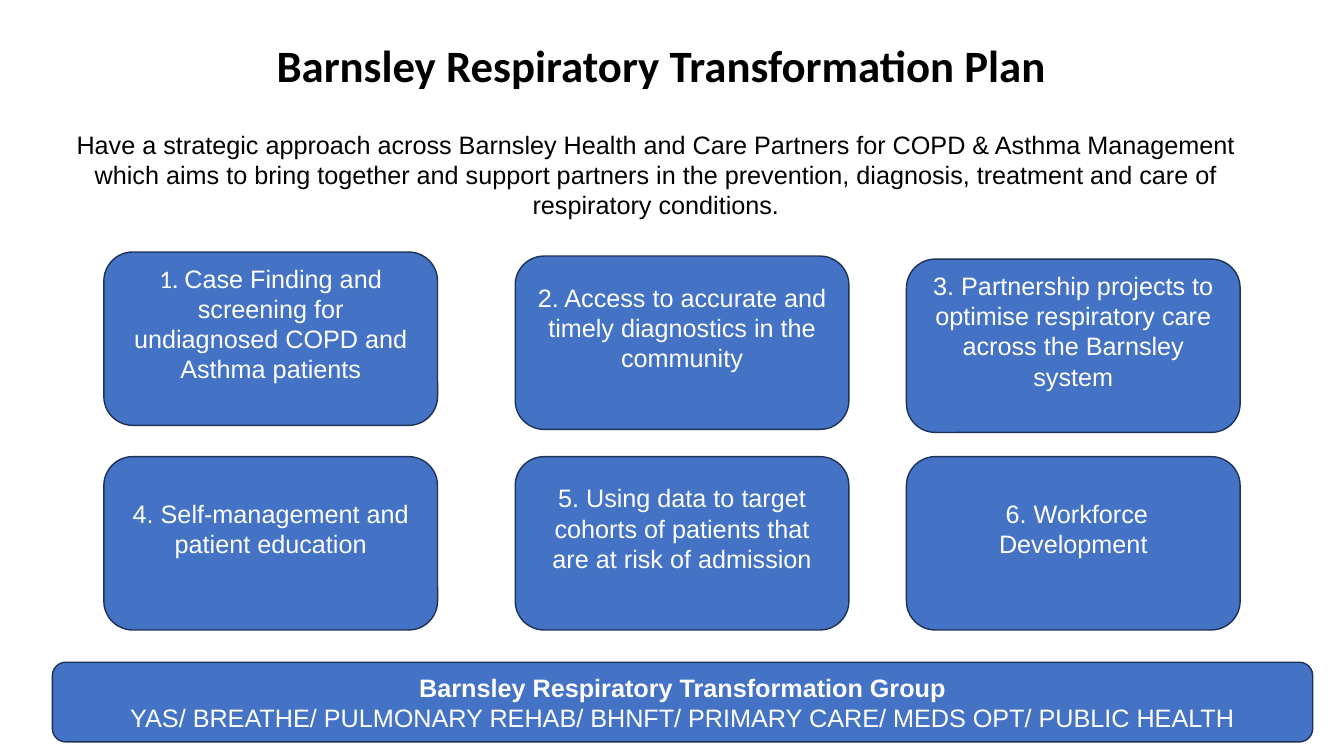
from dataclasses import dataclass

from pptx import Presentation
from pptx.dml.color import RGBColor
from pptx.enum.shapes import MSO_SHAPE
from pptx.enum.text import MSO_ANCHOR, PP_ALIGN
from pptx.slide import Slide
from pptx.text.text import TextFrame
from pptx.util import Inches, Pt

ROUNDED = MSO_SHAPE.ROUNDED_RECTANGLE
CENTER = PP_ALIGN.CENTER
TOP, MIDDLE = MSO_ANCHOR.TOP, MSO_ANCHOR.MIDDLE

COLORS = {"black": "000000", "white": "FFFFFF", "fill": "4472C4", "line": "1E3256"}
BODY = {"name": "Arial", "size": Pt(18), "bold": False}
STRONG = BODY | {"bold": True}
NUMBER = BODY | {"name": "Calibri"}
TITLE = {"name": "Calibri", "size": Pt(32), "bold": True}

COLUMNS = (1.03, 5.11, 8.99)
CARD_WIDTH, CARD_HEIGHT = 3.31, 1.72
LOWER_ROW = 4.53


@dataclass(frozen=True)
class Run:
    text: str
    style: dict


@dataclass(frozen=True)
class Panel:
    left: float
    top: float
    width: float
    height: float
    paragraphs: list[list[Run]]
    bottom_inset: float = 0.05


def card(column: int, top: float, *runs: Run) -> Panel:
    return Panel(COLUMNS[column], top, CARD_WIDTH, CARD_HEIGHT, [list(runs)], 0.35)


PANELS = [
    card(0, 2.5, Run("1. ", NUMBER),
         Run("Case Finding and screening for undiagnosed COPD and Asthma patients", BODY)),
    card(1, 2.54, Run("2. Access to accurate and timely diagnostics in the community", BODY)),
    card(2, 2.57, Run("3. Partnership projects to optimise respiratory care across "
                      "the Barnsley system", BODY)),
    card(0, LOWER_ROW, Run("4. Self-management and patient education", BODY)),
    card(1, LOWER_ROW, Run("5. Using data to target cohorts of patients that are at risk "
                           "of admission", BODY)),
    card(2, LOWER_ROW, Run(" 6. Workforce Development", BODY)),
    Panel(0.52, 6.57, 12.5, 0.79, [
        [Run("Barnsley Respiratory Transformation Group", STRONG)],
        [Run("YAS/ BREATHE/ PULMONARY REHAB/ BHNFT/ PRIMARY CARE/ MEDS OPT/ "
             "PUBLIC HEALTH", BODY)],
    ]),
]


def rgb(key: str) -> RGBColor:
    return RGBColor.from_string(COLORS[key])


def write(tf: TextFrame, paragraphs: list[list[Run]], color: str, anchor: MSO_ANCHOR) -> None:
    tf.word_wrap = True
    tf.vertical_anchor = anchor
    for i, runs in enumerate(paragraphs):
        p = tf.add_paragraph() if i else tf.paragraphs[0]
        p.alignment = CENTER
        for run in runs:
            r = p.add_run()
            r.text = run.text
            r.font.color.rgb = rgb(color)
            for name, value in run.style.items():
                setattr(r.font, name, value)


def add_title(s: Slide) -> None:
    sp = s.shapes.title
    box = {"left": 2.17, "top": 0.32, "width": 8.78, "height": 0.64}
    for name, value in box.items():
        setattr(sp, name, Inches(value))
    write(sp.text_frame, [[Run("Barnsley Respiratory Transformation Plan", TITLE)]], "black", TOP)


def add_aim(s: Slide) -> None:
    sp = s.shapes.add_textbox(Inches(0.32), Inches(1.23), Inches(12.37), Inches(1.01))
    text = ("Have a strategic approach across Barnsley Health and Care Partners for COPD & "
            "Asthma Management which aims to bring together and support partners in the "
            "prevention, diagnosis, treatment and care of respiratory conditions.")
    write(sp.text_frame, [[Run(text, BODY)]], "black", TOP)


def add_panel(s: Slide, panel: Panel) -> None:
    sp = s.shapes.add_shape(ROUNDED, Inches(panel.left), Inches(panel.top),
                            Inches(panel.width), Inches(panel.height))
    sp.shadow.inherit = False
    sp.fill.solid()
    sp.fill.fore_color.rgb = rgb("fill")
    sp.line.color.rgb = rgb("line")
    sp.line.width = Pt(1)
    sp.text_frame.margin_bottom = Inches(panel.bottom_inset)
    write(sp.text_frame, panel.paragraphs, "white", MIDDLE)


def main() -> None:
    prs = Presentation()
    prs.slide_width, prs.slide_height = Inches(13.33), Inches(7.5)
    s = prs.slides.add_slide(prs.slide_layouts[5])
    add_title(s)
    add_aim(s)
    for panel in PANELS:
        add_panel(s, panel)
    prs.save("out.pptx")


if __name__ == "__main__":
    main()
